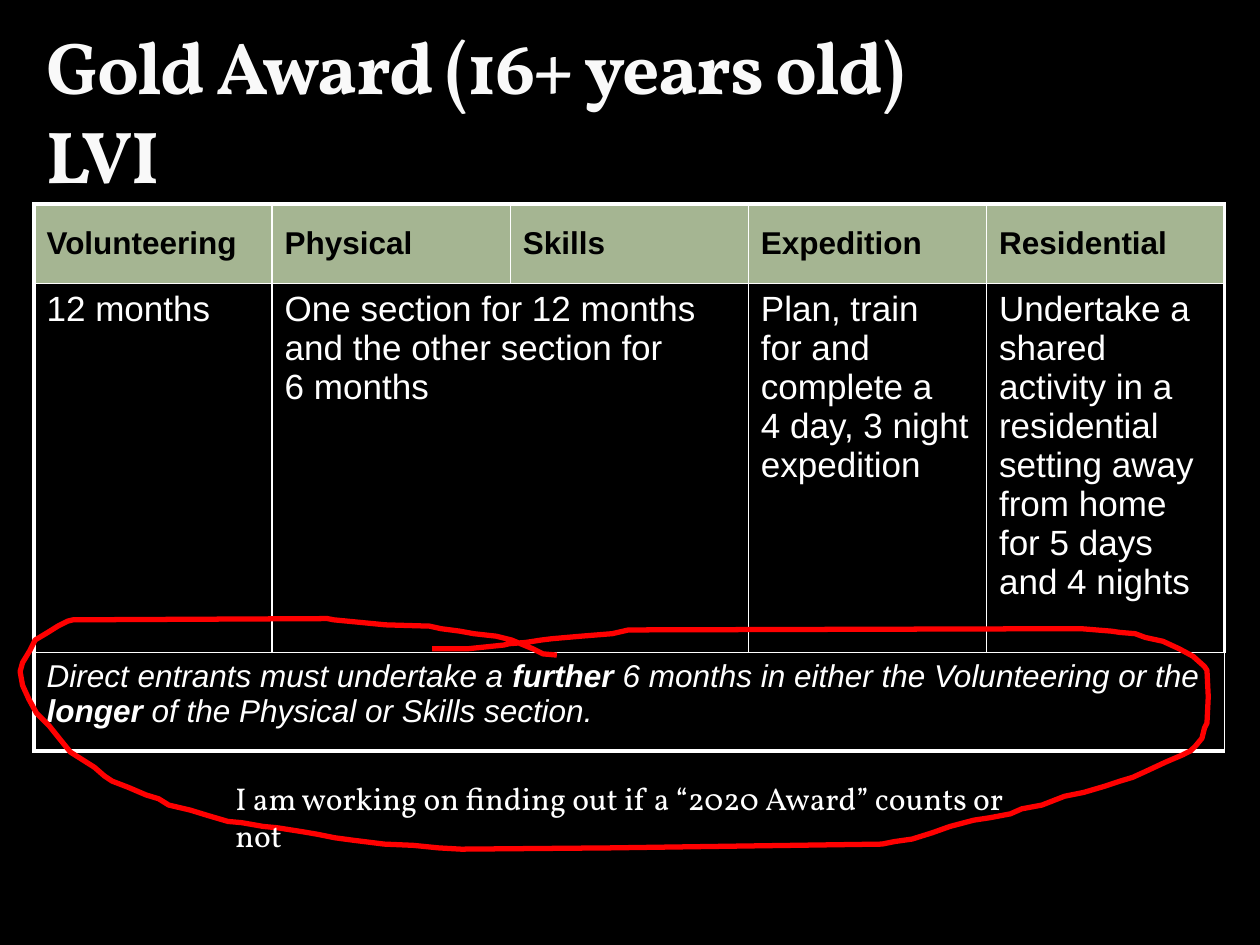
from lxml import etree
from pptx import Presentation
from pptx.dml.color import RGBColor
from pptx.enum.text import MSO_ANCHOR, MSO_AUTO_SIZE, PP_ALIGN
from pptx.oxml import parse_xml
from pptx.oxml.ns import nsdecls, qn
from pptx.util import Pt

PX = 9144  # 100 px to the inch
BLACK = RGBColor(0x00, 0x00, 0x00)
WHITE = RGBColor(0xFF, 0xFF, 0xFF)
OFF_WHITE = RGBColor(0xF9, 0xF9, 0xF9)
SAGE = RGBColor(0xA5, 0xB5, 0x92)
RED = RGBColor(0xFF, 0x00, 0x00)
OLIVE = RGBColor(0x3C, 0x44, 0x22)
TOP, MIDDLE, BOTTOM = MSO_ANCHOR.TOP, MSO_ANCHOR.MIDDLE, MSO_ANCHOR.BOTTOM
LEFT = PP_ALIGN.LEFT
NO_AUTOFIT, GROW = MSO_AUTO_SIZE.NONE, MSO_AUTO_SIZE.SHAPE_TO_FIT_TEXT
SERIF, SANS = "Vollkorn", "Arial"
THIN, THICK = Pt(1), Pt(2.25)

SECTIONS = ["Volunteering", "Physical", "Skills", "Expedition", "Residential"]
REQUIREMENTS = {  # by column
    0: "12 months",
    1: "One section for 12 months and the other section for \v6 months",
    3: "Plan, train \vfor and complete a \v4 day, 3 night expedition",
    4: "Undertake a shared activity in a residential setting away from home "
       "for 5 days and 4 nights",
}
DIRECT_ENTRANTS = [  # text, bold
    ("Direct entrants must undertake a ", False),
    ("further ", True),
    ("6 months in either the Volunteering or the ", False),
    ("longer ", True),
    ("of the Physical or Skills section.", False),
]
ROW_HEIGHTS = [63, 293, 78]

# Pen stroke, in px from the left top of its box
PEN_POINTS = [
    (426, 29), (415, 28), (407, 24), (390, 17), (378, 14), (360, 12), (349, 10),
    (334, 8), (325, 6), (290, 5), (280, 4), (249, 1), (244, 0), (42, 1), (38, 2),
    (30, 6), (22, 11), (12, 17), (8, 25), (2, 35), (0, 42), (2, 53), (7, 64),
    (13, 75), (23, 85), (31, 95), (40, 106), (59, 118), (67, 125), (73, 129),
    (86, 134), (100, 140), (110, 143), (118, 148), (135, 152), (148, 156),
    (165, 161), (176, 162), (193, 165), (204, 166), (223, 169), (235, 171),
    (250, 174), (265, 176), (289, 179), (312, 180), (332, 182), (350, 183),
    (469, 182), (684, 179), (694, 177), (708, 175), (724, 170), (738, 165),
    (757, 160), (770, 158), (786, 155), (795, 151), (811, 148), (829, 141),
    (844, 138), (861, 133), (873, 129), (883, 126), (894, 121), (909, 114),
    (923, 108), (929, 105), (933, 101), (938, 95), (940, 87), (942, 83),
    (943, 62), (942, 41), (940, 38), (931, 30), (920, 24), (907, 18), (893, 15),
    (885, 12), (873, 11), (866, 10), (842, 8), (491, 9), (483, 9), (470, 12),
    (445, 14), (422, 16), (414, 17), (401, 19), (388, 20), (384, 21), (355, 24),
    (327, 24),
]


def px(*lengths):
    return [length * PX for length in lengths]


def style_font(font, name, size, color, bold=False, italic=False):
    font.name, font.size = name, Pt(size)
    font.bold, font.italic = bold, italic
    font.color.rgb = color


def add_title(slide, box, wording):
    title = slide.shapes.title
    title.left, title.top, title.width, title.height = px(*box)
    frame = title.text_frame
    frame.word_wrap, frame.auto_size = True, NO_AUTOFIT
    frame.vertical_anchor = BOTTOM
    heading = frame.paragraphs[0]
    heading.text, heading.alignment = wording, LEFT
    style_font(heading.font, SERIF, 42, OFF_WHITE, bold=True)
    for run in heading.runs:
        properties = run.font._element
        properties.set("spc", "-100")
        properties.insert(0, parse_xml(
            f'<a:ln {nsdecls("a")} w="3175"><a:solidFill><a:srgbClr val="{OLIVE}">'
            '<a:alpha val="25000"/></a:srgbClr></a:solidFill></a:ln>'))


def set_borders(cell, widths):
    """Draw white borders; widths run left, right, top, bottom."""
    properties = cell._tc.get_or_add_tcPr()
    for position, (side, width) in enumerate(zip("LRTB", widths)):
        border = etree.Element(qn(f"a:ln{side}"), w=str(width))
        fill = etree.SubElement(border, qn("a:solidFill"))
        etree.SubElement(fill, qn("a:srgbClr"), val=str(WHITE))
        properties.insert(position, border)


def write_cell(cell, wording, size, color, bold=False, anchor=TOP):
    cell.vertical_anchor = anchor
    paragraph = cell.text_frame.paragraphs[0]
    paragraph.text = wording
    style_font(paragraph.font, SANS, size, color, bold)


def add_award_table(slide, box):
    columns, rows = len(SECTIONS), len(ROW_HEIGHTS)
    table = slide.shapes.add_table(rows, columns, *px(*box)).table
    table.first_row = table.horz_banding = False
    for row, height in zip(table.rows, ROW_HEIGHTS):
        row.height = height * PX
    for r in range(rows):
        for c in range(columns):
            cell = table.cell(r, c)
            if r == 0:
                cell.fill.solid()
                cell.fill.fore_color.rgb = SAGE
            else:
                cell.fill.background()
            on_edge = (c == 0, c == columns - 1, r == 0, r == rows - 1)
            set_borders(cell, [THICK if edge else THIN for edge in on_edge])

    table.cell(1, 1).merge(table.cell(1, 2))
    table.cell(2, 0).merge(table.cell(2, columns - 1))
    for c, section in enumerate(SECTIONS):
        write_cell(table.cell(0, c), section, 18, BLACK, True, MIDDLE)
    for c, requirement in REQUIREMENTS.items():
        write_cell(table.cell(1, c), requirement, 20, WHITE)
    rule = table.cell(2, 0).text_frame.paragraphs[0]
    for wording, bold in DIRECT_ENTRANTS:
        run = rule.add_run()
        run.text = wording
        style_font(run.font, SANS, 18, WHITE, bold, italic=True)


def add_pen_circle(slide, left, top):
    start, *rest = PEN_POINTS
    builder = slide.shapes.build_freeform(*start, scale=PX)
    builder.add_line_segments(rest, close=False)
    circle = builder.convert_to_shape(*px(left, top))
    circle.shadow.inherit = False
    circle.fill.background()
    circle.line.color.rgb = RED
    circle.line.width = Pt(3)


def add_remark(slide, box, wording):
    frame = slide.shapes.add_textbox(*px(*box)).text_frame
    frame.word_wrap, frame.auto_size = True, GROW
    remark = frame.paragraphs[0]
    remark.text = wording
    style_font(remark.font, SERIF, 18, WHITE)


def main():
    deck = Presentation()
    deck.slide_width, deck.slide_height = px(1000, 750)
    slide = deck.slides.add_slide(deck.slide_layouts[5])
    slide.background.fill.solid()
    slide.background.fill.fore_color.rgb = BLACK
    add_title(slide, (27, 0, 945, 162), "Gold Award (16+ years old)\vLVI")
    add_award_table(slide, (27, 162, 945, sum(ROW_HEIGHTS)))
    add_pen_circle(slide, 16, 491)
    add_remark(slide, (177, 613, 669, 40),
               "I am working on finding out if a “2020 Award” counts or not")
    deck.save("out.pptx")


if __name__ == "__main__":
    main()
